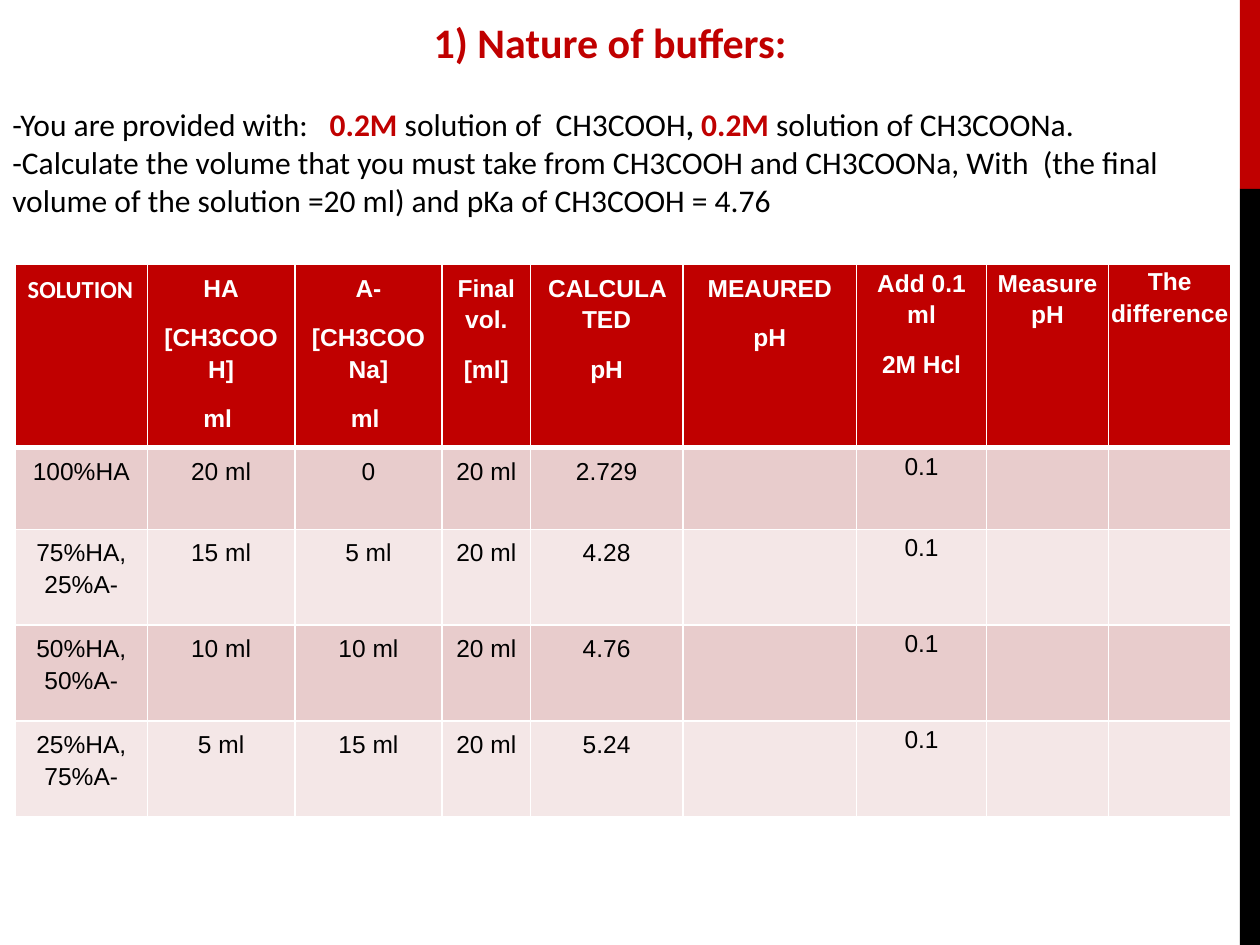
"""Builds the slide on the nature of buffers, with its acetate solutions table."""
from lxml.etree import SubElement
from pptx import Presentation
from pptx.dml.color import RGBColor
from pptx.enum.shapes import MSO_SHAPE as Shape
from pptx.enum.text import PP_ALIGN as Align
from pptx.oxml.ns import qn
from pptx.util import Inches, Pt

RED = RGBColor(0xC0, 0x00, 0x00)
BLACK = RGBColor(0x00, 0x00, 0x00)
WHITE = RGBColor(0xFF, 0xFF, 0xFF)
BANDS = [RGBColor(0xE8, 0xCC, 0xCC), RGBColor(0xF4, 0xE7, 0xE7)]

TITLE = "1) Nature of buffers: "
PLAIN = {"size": Pt(18), "name": "Calibri", "bold": False, "color": BLACK}
STRONG = {**PLAIN, "bold": True}
ACCENT = {**STRONG, "color": RED}
HEADING = {**ACCENT, "size": Pt(24)}
HEADER = {"size": Pt(14), "name": "Arial", "bold": True, "color": WHITE}
FIRST_HEADER = {**HEADER, "name": "Calibri"}
BODY = {**HEADER, "bold": False, "color": BLACK}

INSTRUCTIONS = [
    [("-You are provided with:   ", PLAIN), ("0.2M ", ACCENT),
     ("solution of  CH3COOH", PLAIN), (",", STRONG), (" 0.2M", ACCENT),
     (" solution of CH3COONa.", PLAIN)],
    [("-Calculate the volume that you must take from CH3COOH and CH3COONa, "
      "With  (the final volume of the solution =20 ml) and pKa of CH3COOH = 4.76", PLAIN)],
]
HEADERS = [
    ["SOLUTION"], ["HA", "[CH3COOH]", "ml "], ["A-", "[CH3COONa]", "ml "],
    ["Final vol.", "[ml]"], ["CALCULATED", "pH"], ["MEAURED", "pH"],
    ["Add 0.1 ml", "2M Hcl"], ["Measure pH"], ["The difference"],
]
SOLUTIONS = [
    ("100%HA", "20 ml", "0", "2.729"),
    ("75%HA, 25%A-", "15 ml", "5 ml", "4.28"),
    ("50%HA, 50%A-", "10 ml", "10 ml", "4.76"),
    ("25%HA, 75%A-", "5 ml", "15 ml", "5.24"),
]
FINAL_VOLUME, ADDED_ACID = "20 ml", "0.1"
COLUMN_WIDTHS = [1.05, 1.17, 1.17, 0.7, 1.21, 1.38, 1.03, 0.97, 0.97]
ROW_HEIGHTS = [1.26, 0.65, 0.76, 0.76, 0.76]
SIDE_BARS = [(0, 1.5, RED), (1.5, 6, BLACK)]
WIDE_MARGINS = (0.1, 0.05, 0.1, 0.05)
TIGHT_MARGINS = (0.07, 0.01, 0.07, 0)
NO_MARGINS = (0, 0, 0, 0)


def apply(target, values):
    for name, value in values.items():
        setattr(target, name, value)


def add_run(paragraph, text, style):
    run = paragraph.add_run()
    run.text = text
    apply(run.font, {key: value for key, value in style.items() if key != "color"})
    run.font.color.rgb = style["color"]


def add_side_bar(slide, top, height, color):
    bar = slide.shapes.add_shape(
        Shape.RECTANGLE, Inches(9.84), Inches(top), Inches(0.16), Inches(height))
    bar.shadow.inherit = False
    bar.fill.solid()
    bar.fill.fore_color.rgb = color
    bar.line.fill.background()


def add_introduction(slide):
    frame = slide.shapes.add_textbox(
        Inches(0), Inches(0.08), Inches(9.76), Inches(1.72)).text_frame
    frame.word_wrap = True
    heading = frame.paragraphs[0]
    heading.alignment = Align.CENTER
    add_run(heading, TITLE, HEADING)
    for index, parts in enumerate(INSTRUCTIONS):
        instruction = frame.add_paragraph()
        instruction.space_before = Pt(0 if index else 22)
        for text, style in parts:
            add_run(instruction, text, style)


def add_borders(cell, widths):
    properties = cell._tc.get_or_add_tcPr()
    for side, width in widths.items():
        line = SubElement(properties, qn(f"a:ln{side}"), w=str(Pt(width)))
        fill = SubElement(line, qn("a:solidFill"))
        SubElement(fill, qn("a:srgbClr"), val=str(WHITE))


def fill_cell(cell, row, column, lines):
    is_header = row == 0
    add_borders(cell, {"L": 1, "R": 1, "T": 3 if row == 1 else 1, "B": 3 if is_header else 1})
    cell.fill.solid()
    cell.fill.fore_color.rgb = RED if is_header else BANDS[(row - 1) % 2]
    margins = WIDE_MARGINS if column < 6 else TIGHT_MARGINS
    if is_header and column == 8:
        margins = NO_MARGINS
    sides = ("margin_left", "margin_top", "margin_right", "margin_bottom")
    apply(cell, dict(zip(sides, map(Inches, margins))))
    corner = is_header and column == 0
    style = FIRST_HEADER if corner else HEADER if is_header else BODY
    for index, text in enumerate(lines):
        paragraph = cell.text_frame.add_paragraph() if index else cell.text_frame.paragraphs[0]
        apply(paragraph, {"alignment": Align.LEFT if corner else Align.CENTER,
                          "line_spacing": 1.15, "space_after": Pt(10)})
        add_run(paragraph, text, style)


def add_solutions_table(slide):
    rows = [HEADERS]
    for solution, acid, base, ph in SOLUTIONS:
        rows.append([[solution], [acid], [base], [FINAL_VOLUME], [ph],
                     [], [ADDED_ACID], [], []])
    table = slide.shapes.add_table(
        len(rows), len(HEADERS), Inches(0.12), Inches(2.1),
        Inches(sum(COLUMN_WIDTHS)), Inches(sum(ROW_HEIGHTS))).table
    for column, width in zip(table.columns, COLUMN_WIDTHS):
        column.width = Inches(width)
    for row, height in zip(table.rows, ROW_HEIGHTS):
        row.height = Inches(height)
    for row, cells in enumerate(rows):
        for column, lines in enumerate(cells):
            fill_cell(table.cell(row, column), row, column, lines)


def main():
    deck = Presentation()
    apply(deck, {"slide_width": Inches(10), "slide_height": Inches(7.5)})
    slide = deck.slides.add_slide(deck.slide_layouts[6])
    for top, height, color in SIDE_BARS:
        add_side_bar(slide, top, height, color)
    add_introduction(slide)
    add_solutions_table(slide)
    deck.save("out.pptx")


if __name__ == "__main__":
    main()
